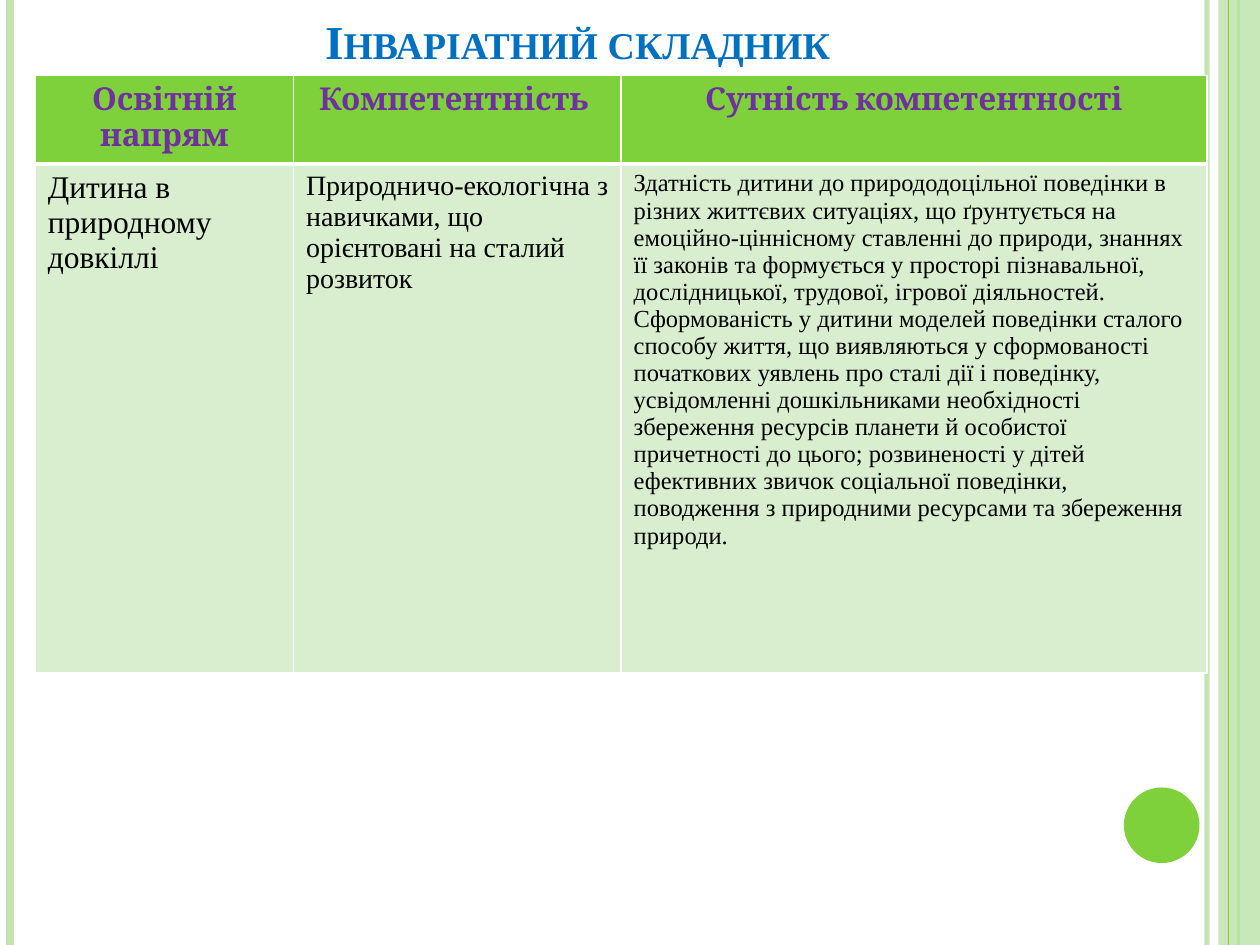
from lxml import etree
from pptx import Presentation
from pptx.dml.color import RGBColor
from pptx.enum import shapes, text
from pptx.oxml import ns
from pptx.util import Inches, Pt

GREEN = RGBColor(0x7F, 0xD1, 0x3B)
LIGHT_GREEN = RGBColor(0xC0, 0xE5, 0xAF)
PALE_GREEN = RGBColor(0xD8, 0xEE, 0xCE)
BLUE = RGBColor(0x00, 0x70, 0xC0)
PURPLE = RGBColor(0x70, 0x30, 0xA0)
BLACK = RGBColor(0x00, 0x00, 0x00)
SERIF = "Times New Roman"


def set_alpha(parent, percent):
    """Make the solid colour inside an XML element partly transparent."""
    color = parent.find(".//" + ns.qn("a:srgbClr"))
    etree.SubElement(color, ns.qn("a:alpha")).set("val", str(percent * 1000))


def add_run(paragraph, wording, size, font, color, bold):
    run = paragraph.add_run()
    run.text = wording
    run.font.size = Pt(size)
    run.font.name = font
    run.font.bold = bold
    run.font.color.rgb = color
    return run


prs = Presentation()
prs.slide_width = Inches(10)
prs.slide_height = Inches(7.5)
slide = prs.slides.add_slide(prs.slide_layouts[6])

# Side stripes; the band lies over the first three and under the last
stripes = [
    (9.58, LIGHT_GREEN, 3, 93),
    (0.08, LIGHT_GREEN, 4.5, 100),
    (9.83, GREEN, 1.5, 100),
    (9.75, GREEN, 0.75, 100),
]
band = None
for x, color, width, opacity in stripes:
    if x == 9.75:
        band = slide.shapes.add_shape(
            shapes.MSO_SHAPE.RECTANGLE, Inches(9.67), 0, Inches(0.33), Inches(7.5))
    stripe = slide.shapes.add_connector(
        shapes.MSO_CONNECTOR.STRAIGHT, Inches(x), 0, Inches(x), Inches(7.5))
    stripe.line.color.rgb = color
    stripe.line.width = Pt(width)
    if opacity < 100:
        set_alpha(stripe.line._ln, opacity)
    etree.SubElement(stripe._element.spPr, ns.qn("a:effectLst"))

circle = slide.shapes.add_shape(
    shapes.MSO_SHAPE.OVAL, Inches(8.92), Inches(6.25), Inches(0.6), Inches(0.6))
for ornament, color in ((band, LIGHT_GREEN), (circle, GREEN)):
    ornament.shadow.inherit = False
    ornament.fill.solid()
    ornament.fill.fore_color.rgb = color
    ornament.line.fill.background()
set_alpha(band._element.spPr, 87)

# Title
title = slide.shapes.add_textbox(Inches(0.5), Inches(0.13), Inches(8.17), Inches(0.47))
title.text_frame.word_wrap = True
title.text_frame.vertical_anchor = text.MSO_ANCHOR.BOTTOM
heading = title.text_frame.paragraphs[0]
heading.alignment = text.PP_ALIGN.CENTER
heading_run = add_run(heading, "Інваріатний складник", 27, SERIF, BLUE, True)
heading_run.font._element.set("cap", "small")

# Competence table: each cell is a list of paragraphs
headers = [["Освітній напрям"], ["Компетентність "], ["Сутність компетентності"]]
nature = [
    ["Дитина в природному довкіллі"],
    ["Природничо-екологічна з навичками, що орієнтовані на сталий розвиток"],
    ["Здатність дитини до природодоцільної поведінки в різних життєвих ситуаціях, "
     "що ґрунтується на емоційно-ціннісному ставленні до природи, знаннях її законів "
     "та формується у просторі пізнавальної, дослідницької, трудової, ігрової "
     "діяльностей.",
     "Сформованість у дитини моделей поведінки сталого способу життя, що виявляються "
     "у сформованості початкових уявлень про сталі дії і поведінку, усвідомленні "
     "дошкільниками необхідності збереження ресурсів планети й особистої причетності "
     "до цього; розвиненості у дітей ефективних звичок соціальної поведінки, "
     "поводження з природними ресурсами та збереження природи."],
]
# wording, text sizes, font, text colour, bold, alignment, fill, top and bottom border
row_styles = [
    (headers, (18, 18, 18), "Cambria", PURPLE, True, text.PP_ALIGN.CENTER, GREEN, 1, 3),
    (nature, (18, 16, 14), SERIF, BLACK, False, text.PP_ALIGN.LEFT, PALE_GREEN, 3, 1),
]
competences = slide.shapes.add_table(
    2, 3, Inches(0.28), Inches(0.6), Inches(9.3), Inches(4.74)).table
for column, width in zip(competences.columns, (2.05, 2.6, 4.65)):
    column.width = Inches(width)
for row, height in zip(competences.rows, (0.7, 4.04)):
    row.height = Inches(height)

for row, style in zip(competences.rows, row_styles):
    wordings, sizes, font, color, bold, alignment, fill, top, bottom = style
    for cell, paragraphs, size in zip(row.cells, wordings, sizes):
        for i, wording in enumerate(paragraphs):
            frame = cell.text_frame
            paragraph = frame.add_paragraph() if i else frame.paragraphs[0]
            paragraph.alignment = alignment
            add_run(paragraph, wording, size, font, color, bold)
        properties = cell._tc.get_or_add_tcPr()
        for side, width in (("L", 1), ("R", 1), ("T", top), ("B", bottom)):
            border = etree.SubElement(properties, ns.qn("a:ln" + side), w=str(Pt(width)))
            paint = etree.SubElement(border, ns.qn("a:solidFill"))
            etree.SubElement(paint, ns.qn("a:srgbClr"), val="FFFFFF")
        cell.fill.solid()
        cell.fill.fore_color.rgb = fill

prs.save("out.pptx")
